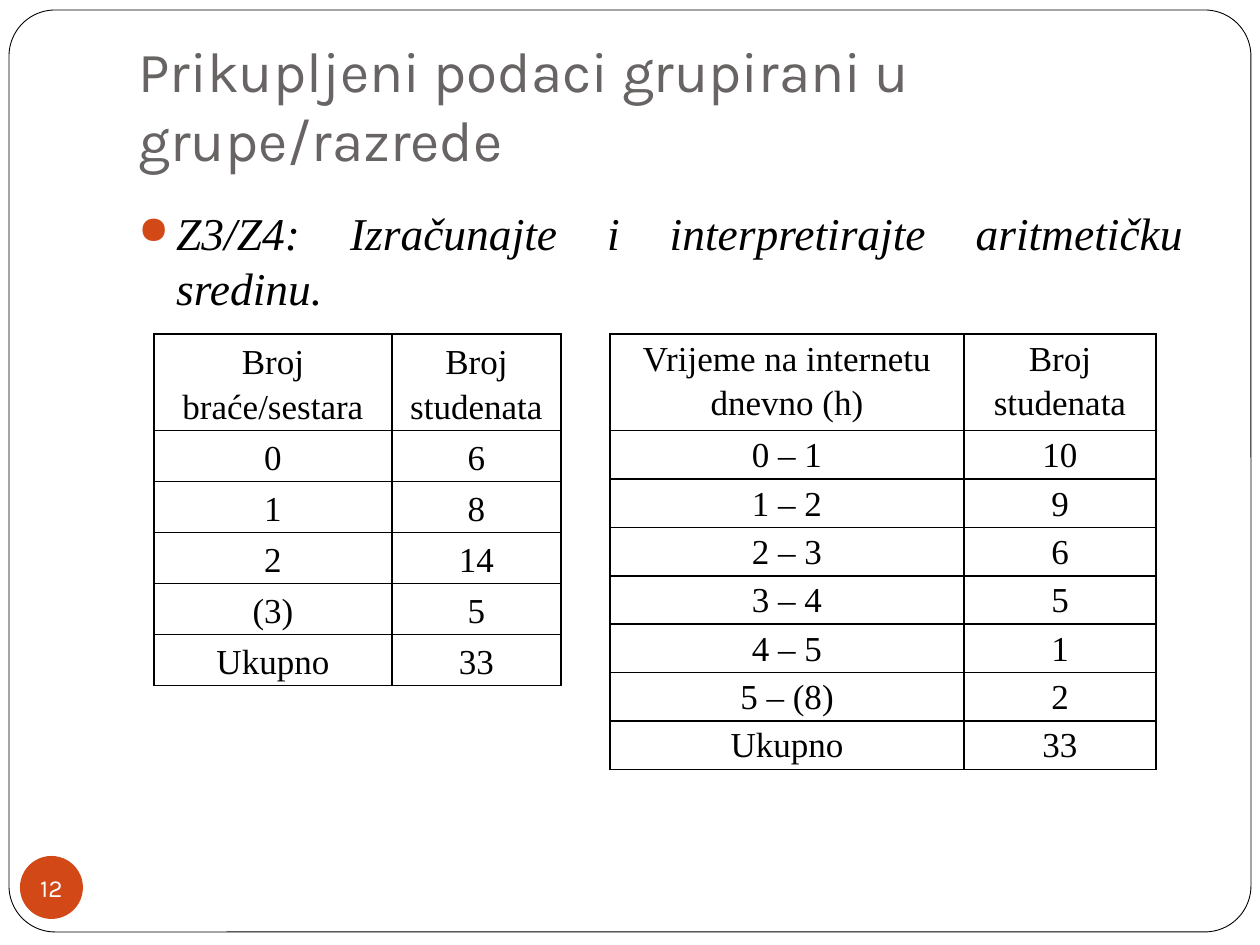
from dataclasses import dataclass

from lxml import etree
from pptx import Presentation
from pptx import util as u
from pptx.dml.color import RGBColor
from pptx.enum import shapes, text
from pptx.oxml.ns import qn

SCALE = 914400 / 126


def px(n):
    return u.Emu(round(n * SCALE))


@dataclass(frozen=True)
class Theme:
    paper: str = "FFFFFF"
    ink: str = "000000"
    grey: str = "696464"
    accent: str = "D34817"
    sans: str = "Karla"
    serif: str = "Times New Roman"
    title: float = 32.4
    body: float = 26
    cell: float = 20
    badge: float = 14


class Page:
    def __init__(self, deck, theme):
        self.theme = theme
        self.slide = deck.slides.add_slide(deck.slide_layouts[6])

    def style(self, para, face, size, color, align):
        para.font.name = face
        para.font.size = u.Pt(size)
        para.font.color.rgb = RGBColor.from_string(color)
        para.alignment = align

    def shape(self, kind, box, fill, line=None):
        item = self.slide.shapes.add_shape(kind, *map(px, box))
        item.shadow.inherit = False
        item.fill.solid()
        item.fill.fore_color.rgb = RGBColor.from_string(fill)
        if line:
            item.line.color.rgb = RGBColor.from_string(line)
            item.line.width = u.Pt(0.5)
        else:
            item.line.fill.background()
        return item

    def frame(self, box):
        t = self.theme
        item = self.shape(shapes.MSO_SHAPE.ROUNDED_RECTANGLE, box, t.paper, t.ink)
        item.adjustments[0] = 0.05

    def badge(self, box, words):
        t = self.theme
        body = self.shape(shapes.MSO_SHAPE.OVAL, box, t.accent).text_frame
        body.margin_left = body.margin_right = 0
        body.margin_top = body.margin_bottom = 0
        body.vertical_anchor = text.MSO_ANCHOR.MIDDLE
        body.word_wrap = False
        body.text = words
        self.style(body.paragraphs[0], t.sans, t.badge, t.paper, text.PP_ALIGN.CENTER)

    def label(self, box, words):
        body = self.slide.shapes.add_textbox(*map(px, box)).text_frame
        body.word_wrap = True
        body.text = words
        return body

    def title(self, box, words):
        t = self.theme
        body = self.label(box, words)
        body.vertical_anchor = text.MSO_ANCHOR.BOTTOM
        body.margin_bottom = u.Inches(0.1)
        self.style(body.paragraphs[0], t.sans, t.title, t.grey, text.PP_ALIGN.LEFT)

    def bullet(self, box, words):
        t = self.theme
        para = self.label(box, words).paragraphs[0]
        self.style(para, t.serif, t.body, t.ink, text.PP_ALIGN.JUSTIFY)
        para.font.italic = True
        para.space_before = u.Pt(5.8)
        props = para._p.get_or_add_pPr()
        indent = u.Inches(0.3)
        props.set("marL", str(indent))
        props.set("indent", str(-indent))
        color = etree.Element(qn("a:buClr"))
        etree.SubElement(color, qn("a:srgbClr"), val=t.accent)
        size = etree.Element(qn("a:buSzPct"), val="85000")
        mark = etree.Element(qn("a:buChar"), char="●")
        spot = props.index(props.find(qn("a:defRPr")))
        props[spot:spot] = [color, size, mark]

    def border(self, cell):
        props = cell._tc.get_or_add_tcPr()
        for spot, side in enumerate(("lnL", "lnR", "lnT", "lnB")):
            line = etree.Element(qn("a:" + side), w=str(u.Pt(1)))
            fill = etree.SubElement(line, qn("a:solidFill"))
            etree.SubElement(fill, qn("a:srgbClr"), val=self.theme.ink)
            props.insert(spot, line)

    def table(self, left, top, cols, head, step, rows, anchor, after=0):
        """Draw a grid whose first row is head px high and the others step px."""
        t = self.theme
        high = head + step * (len(rows) - 1)
        grid = self.slide.shapes.add_table(
            len(rows), len(cols), *map(px, (left, top, sum(cols), high))).table
        grid.first_row = grid.horz_banding = False
        for col, wide in zip(grid.columns, cols):
            col.width = px(wide)
        for r, row in enumerate(rows):
            grid.rows[r].height = px(step if r else head)
            for c, words in enumerate(row):
                cell = grid.cell(r, c)
                cell.text = words
                cell.fill.background()
                cell.vertical_anchor = anchor
                cell.margin_left = cell.margin_right = px(9)
                cell.margin_top = cell.margin_bottom = 0
                para = cell.text_frame.paragraphs[0]
                self.style(para, t.serif, t.cell, t.ink, text.PP_ALIGN.CENTER)
                para.line_spacing = 1.15
                if after and r == 0:
                    para.space_after = u.Pt(after)
                self.border(cell)


SIBLINGS = [
    ("Broj braće/sestara", "Broj studenata"),
    ("0", "6"), ("1", "8"), ("2", "14"), ("(3)", "5"), ("Ukupno", "33"),
]
HOURS = [
    ("Vrijeme na internetu dnevno (h)", "Broj studenata"),
    ("0 – 1", "10"), ("1 – 2", "9"), ("2 – 3", "6"), ("3 – 4", "5"),
    ("4 – 5", "1"), ("5 – (8)", "2"), ("Ukupno", "33"),
]


def main():
    deck = Presentation()
    deck.slide_width, deck.slide_height = px(1260), px(945)
    page = Page(deck, Theme())
    page.frame((9, 10, 1242, 922))
    page.title((126, 38, 1071, 147), "Prikupljeni podaci grupirani u grupe/razrede")
    page.bullet((126, 199, 1071, 630),
                "Z3/Z4: Izračunajte i interpretirajte aritmetičku sredinu.")
    page.table(154, 334, (238, 169), 89, 51, SIBLINGS, text.MSO_ANCHOR.MIDDLE)
    page.badge((20, 856, 63, 63), "12")
    page.table(610, 334, (354, 192), 89, 44, HOURS, text.MSO_ANCHOR.TOP, after=10)
    deck.save("out.pptx")


if __name__ == "__main__":
    main()
